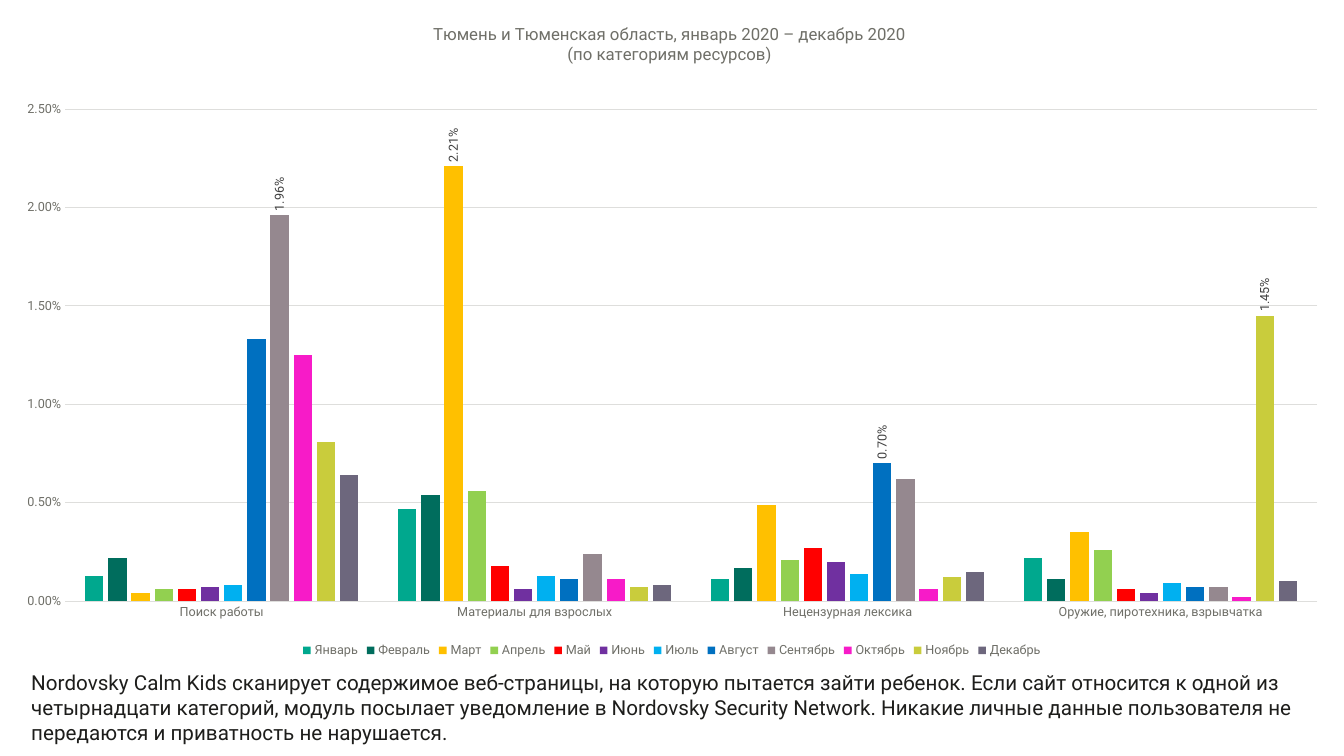
from dataclasses import dataclass
from typing import Optional

from lxml import etree
from pptx import Presentation
from pptx.chart.chart import Chart
from pptx.chart.data import CategoryChartData
from pptx.chart.series import BarSeries
from pptx.dml.color import RGBColor
from pptx.enum.chart import XL_CHART_TYPE as ChartType
from pptx.enum.chart import XL_LABEL_POSITION as LabelPosition
from pptx.enum.chart import XL_LEGEND_POSITION as LegendPosition
from pptx.enum.chart import XL_TICK_MARK as TickMark
from pptx.oxml.ns import qn
from pptx.slide import Slide
from pptx.text.text import Font
from pptx.util import Inches, Pt

FONT = "Roboto"
WHITE = RGBColor(0xFF, 0xFF, 0xFF)
INK = RGBColor(0x1D, 0x1D, 0x1B)
GRAY = RGBColor(0x6F, 0x6F, 0x68)
LABEL_GRAY = RGBColor(0x40, 0x40, 0x40)
GRID = RGBColor(0xDE, 0xDE, 0xDC)
PERCENT = "0.00%"

TITLE_LINES = ("Тюмень и Тюменская область, январь 2020 – декабрь 2020",
               "(по категориям ресурсов)")
CATEGORIES = ("Поиск работы", "Материалы для взрослых",
              "Нецензурная лексика", "Оружие, пиротехника, взрывчатка")
NOTE = ("Nordovsky Calm Kids сканирует содержимое веб-страницы, на которую "
        "пытается зайти ребенок. Если сайт относится к одной из четырнадцати "
        "категорий, модуль посылает уведомление в Nordovsky Security Network. "
        "Никакие личные данные пользователя не передаются и приватность не "
        "нарушается.")


@dataclass(frozen=True)
class Month:
    name: str
    color: RGBColor
    shares: tuple[float, ...]
    labelled: Optional[int] = None  # category whose peak carries a label


MONTHS = (
    Month("Январь", RGBColor(0x00, 0xA8, 0x8E), (0.0013, 0.0047, 0.0011, 0.0022)),
    Month("Февраль", RGBColor(0x00, 0x6D, 0x5D), (0.0022, 0.0054, 0.0017, 0.0011)),
    Month("Март", RGBColor(0xFF, 0xC0, 0x00), (0.0004, 0.0221, 0.0049, 0.0035), 1),
    Month("Апрель", RGBColor(0x92, 0xD0, 0x50), (0.0006, 0.0056, 0.0021, 0.0026)),
    Month("Май", RGBColor(0xFF, 0x00, 0x00), (0.0006, 0.0018, 0.0027, 0.0006)),
    Month("Июнь", RGBColor(0x70, 0x30, 0xA0), (0.0007, 0.0006, 0.002, 0.0004)),
    Month("Июль", RGBColor(0x00, 0xB0, 0xF0), (0.0008, 0.0013, 0.0014, 0.0009)),
    Month("Август", RGBColor(0x00, 0x70, 0xC0), (0.0133, 0.0011, 0.007, 0.0007), 2),
    Month("Сентябрь", RGBColor(0x95, 0x88, 0x8F), (0.0196, 0.0024, 0.0062, 0.0007), 0),
    Month("Октябрь", RGBColor(0xF7, 0x1B, 0xC8), (0.0125, 0.0011, 0.0006, 0.0002)),
    Month("Ноябрь", RGBColor(0xC9, 0xCC, 0x3C), (0.0081, 0.0007, 0.0012, 0.0145), 3),
    Month("Декабрь", RGBColor(0x6D, 0x67, 0x7D), (0.0064, 0.0008, 0.0015, 0.001)),
)


def format_font(font: Font, size: float, color: RGBColor) -> None:
    font.name = FONT
    font.size = Pt(size)
    font.bold = False
    font.color.rgb = color


def place_part(part: etree._Element, index: int, inner: bool = False,
               **fractions: float) -> None:
    """Set a manual layout, in fractions of the chart's size."""
    for old_layout in part.findall(qn("c:layout")):
        part.remove(old_layout)
    layout = etree.Element(qn("c:layout"))
    manual = etree.SubElement(layout, qn("c:manualLayout"))
    settings = {"layoutTarget": "inner"} if inner else {}
    settings |= {"xMode": "edge", "yMode": "edge"}
    settings |= {key: str(value) for key, value in fractions.items()}
    for key, value in settings.items():
        etree.SubElement(manual, qn(f"c:{key}")).set("val", value)
    part.insert(index, layout)


def add_title(chart: Chart) -> None:
    frame = chart.chart_title.text_frame
    for number, line in enumerate(TITLE_LINES):
        paragraph = frame.add_paragraph() if number else frame.paragraphs[0]
        run = paragraph.add_run()
        run.text = line
        format_font(run.font, 12, GRAY)


def format_axes(chart: Chart) -> None:
    for axis in (chart.category_axis, chart.value_axis):
        axis.major_tick_mark = axis.minor_tick_mark = TickMark.NONE
        format_font(axis.tick_labels.font, 9, GRAY)
    values = chart.value_axis
    values.minimum_scale, values.maximum_scale = 0, 0.025
    values.major_unit = 0.005
    values.tick_labels.number_format = PERCENT
    values.tick_labels.number_format_is_linked = False
    values.format.line.fill.background()
    for line in (chart.category_axis.format.line, values.major_gridlines.format.line):
        line.color.rgb = GRID
        line.width = Pt(0.75)


def format_series(series: BarSeries, month: Month) -> None:
    series.format.fill.solid()
    series.format.fill.fore_color.rgb = month.color
    series.invert_if_negative = False
    if month.labelled is None:
        return
    series.data_labels.show_value = False
    label = series.points[month.labelled].data_label
    format_font(label.font, 9, LABEL_GRAY)
    label.position = LabelPosition.OUTSIDE_END
    for body in series._element.iter(qn("a:bodyPr")):
        body.set("rot", "-5400000")
        body.set("vert", "horz")


def add_share_chart(slide: Slide) -> None:
    data = CategoryChartData(number_format=PERCENT)
    data.categories = CATEGORIES
    for month in MONTHS:
        data.add_series(month.name, month.shares)
    chart = slide.shapes.add_chart(ChartType.COLUMN_CLUSTERED, 0, 0, Inches(13.33),
                                   Inches(6.58), data).chart
    format_font(chart.font, 9, GRAY)
    add_title(chart)
    format_axes(chart)
    plot = chart.plots[0]
    plot.gap_width, plot.overlap = 219, -27
    plot.vary_by_categories = False
    for series, month in zip(plot.series, MONTHS):
        format_series(series, month)
    chart.has_legend = True
    chart.legend.position = LegendPosition.BOTTOM
    chart.legend.include_in_layout = False
    format_font(chart.legend.font, 9, GRAY)

    # Title, plot and legend positions
    place_part(chart.chart_title._element, 1, x=0.32, y=0.03)
    place_part(chart._chartSpace.chart.plotArea, 0, inner=True,
               x=0.0485, y=0.1645, w=0.9315, h=0.742)
    place_part(chart.legend._element, 1, x=0.222, y=0.967, w=0.556, h=0.033)


def add_text(slide: Slide, text: str, *, left: float, top: float, width: float,
             height: float, size: float, color: RGBColor) -> None:
    frame = slide.shapes.add_textbox(Inches(left), Inches(top), Inches(width),
                                     Inches(height)).text_frame
    frame.word_wrap = True
    frame.margin_left = frame.margin_right = Inches(0.13)
    frame.margin_top = frame.margin_bottom = Inches(0.07)
    run = frame.paragraphs[0].add_run()
    run.text = text
    format_font(run.font, size, color)


def main() -> None:
    presentation = Presentation()
    presentation.slide_width = Inches(13.33)
    presentation.slide_height = Inches(7.5)
    slide = presentation.slides.add_slide(presentation.slide_layouts[6])
    slide.background.fill.solid()
    slide.background.fill.fore_color.rgb = WHITE

    # Chart above, explanation below
    add_share_chart(slide)
    add_text(slide, NOTE, left=0.18, top=6.58, width=12.97, height=0.87,
             size=14.7, color=INK)
    presentation.save("out.pptx")


if __name__ == "__main__":
    main()
